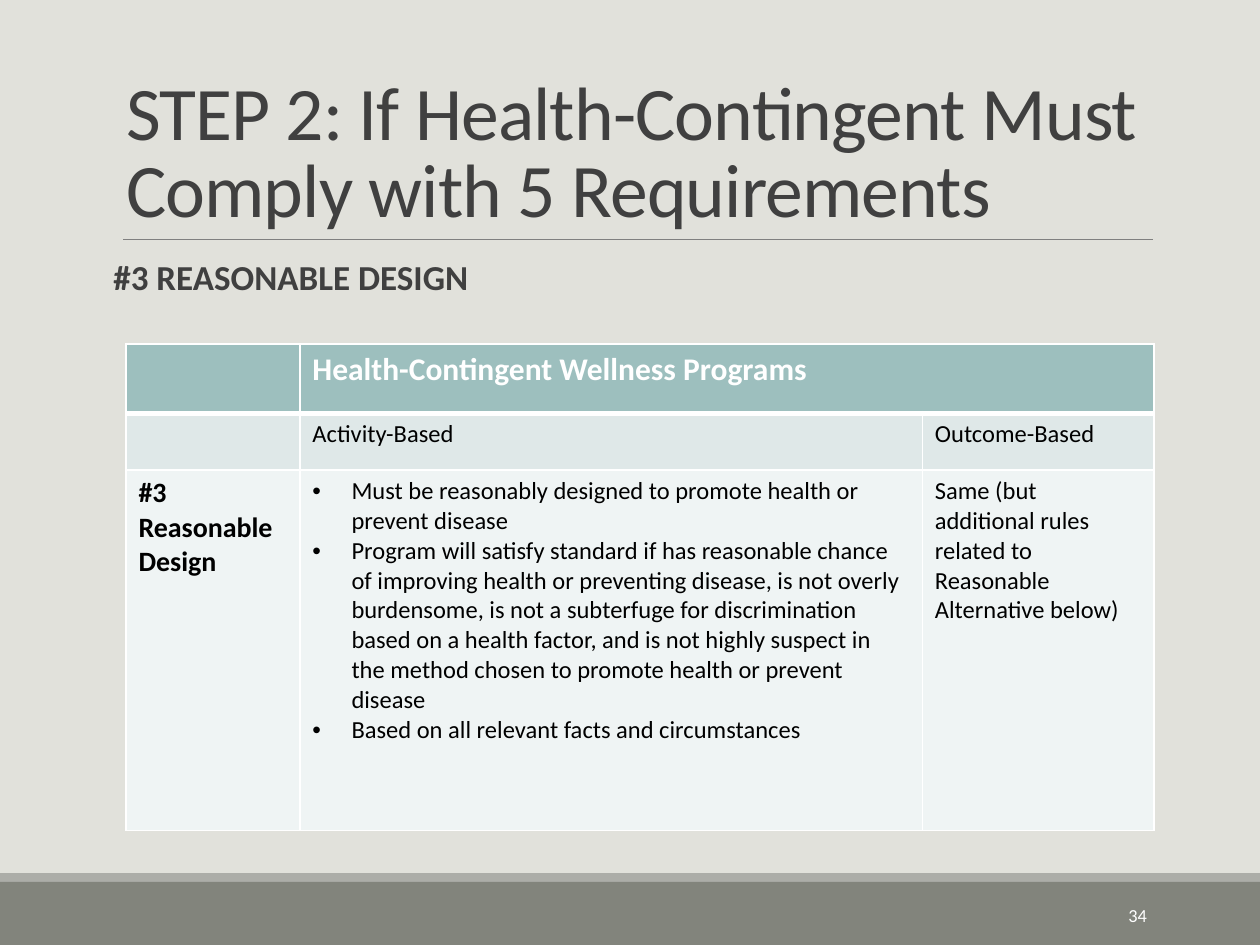
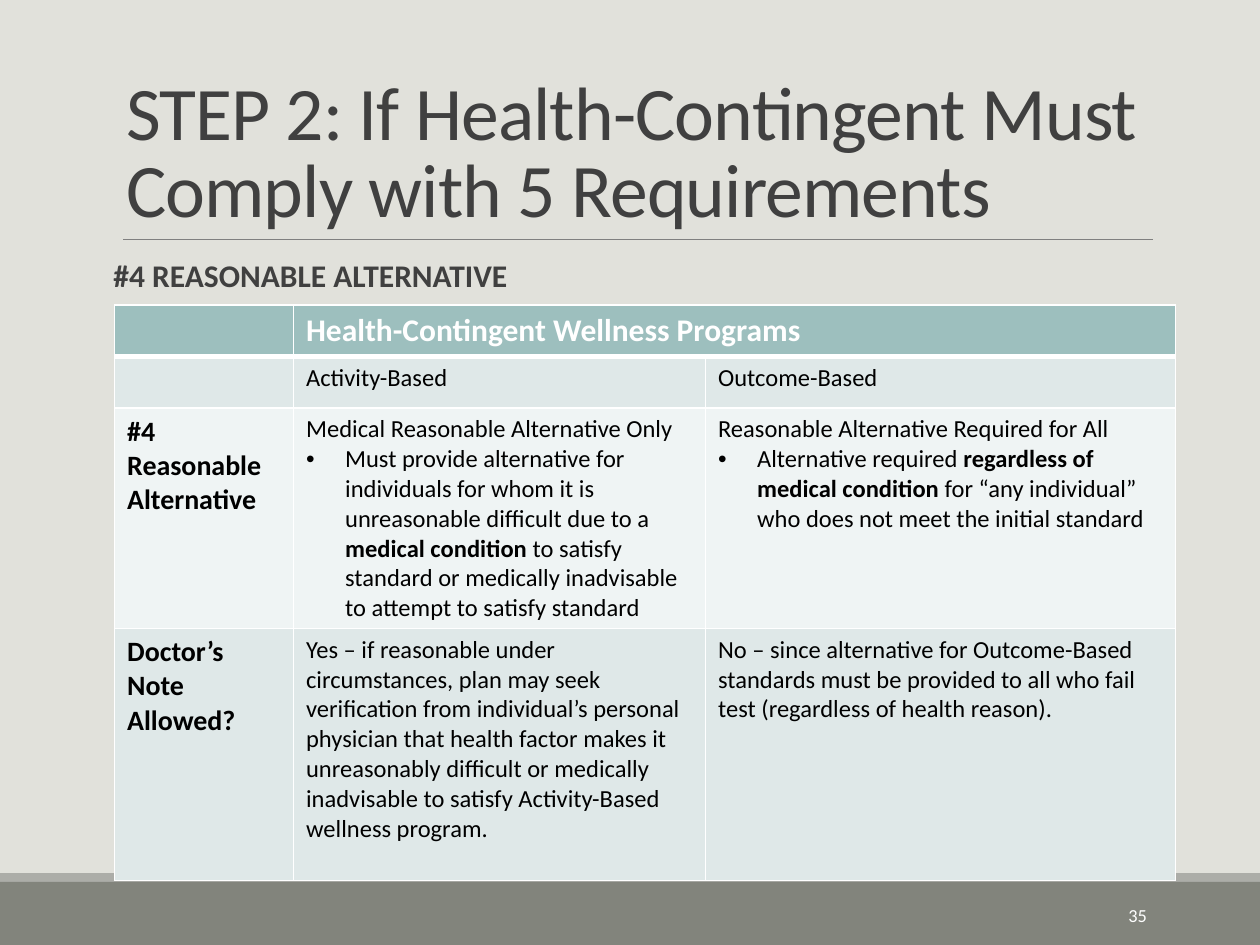
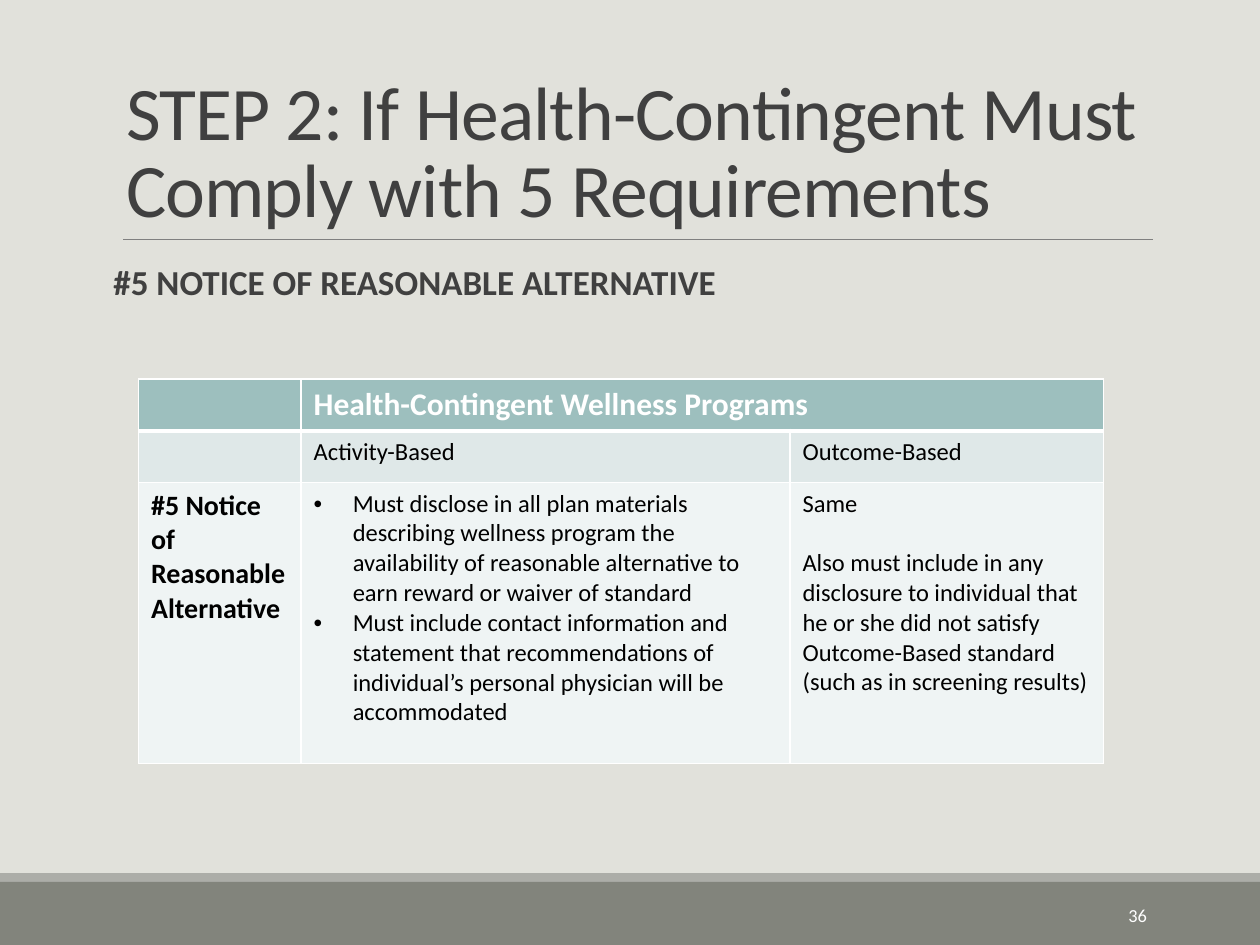
from dataclasses import dataclass

from lxml import etree
from pptx import Presentation
from pptx.dml.color import RGBColor
from pptx.enum.shapes import MSO_CONNECTOR, MSO_SHAPE
from pptx.enum.text import MSO_ANCHOR, PP_ALIGN
from pptx.oxml.ns import qn
from pptx.util import Inches, Pt

RECTANGLE = MSO_SHAPE.RECTANGLE
STRAIGHT = MSO_CONNECTOR.STRAIGHT
MIDDLE, BOTTOM = MSO_ANCHOR.MIDDLE, MSO_ANCHOR.BOTTOM
LEFT, RIGHT = PP_ALIGN.LEFT, PP_ALIGN.RIGHT

FONT = "Calibri"
BACKGROUND, STRIPE, FOOTER, RULE = "E1E1DB", "ACADA8", "82847C", "808080"
DARK, BLACK, WHITE = "404040", "000000", "FFFFFF"
HEADER_FILL, BAND_FILLS = "9DBFBE", ("DFE8E8", "EFF4F4")

TITLE = "STEP 2: If Health-Contingent Must Comply with 5 Requirements"
HEADER_ROW = ("", "Health-Contingent Wellness Programs", "")
SUBHEADER_ROW = ("", "Activity-Based", "Outcome-Based")
FIRST_NUMBER = 34
BLANK_LINE = 17  # points


@dataclass(frozen=True)
class Line:
    """One paragraph of a cell; **double stars** mark bold words."""
    text: str
    bullet: bool = False
    space_before: float = 0


@dataclass(frozen=True)
class Requirement:
    """One slide: a heading and a table comparing the two programs."""
    heading: str
    heading_size: float
    heading_top: float
    heading_height: float
    table_left: float
    table_top: float
    columns: tuple[float, ...]
    rows: tuple[float, ...]
    body: tuple[tuple[str, list[Line], list[Line]], ...]


REQUIREMENTS = [
    Requirement(
        "#3 REASONABLE DESIGN", 20, 2.02, 4.4,
        1, 2.73, (1.38, 4.94, 1.84), (0.55, 0.45, 2.86),
        ((
            "#3 Reasonable Design",
            [
                Line("Must be reasonably designed to promote health or prevent disease", True),
                Line("Program will satisfy standard if has reasonable chance of improving "
                     "health or preventing disease, is not overly burdensome, is not a "
                     "subterfuge for discrimination based on a health factor, and is not "
                     "highly suspect in the method chosen to promote health or prevent "
                     "disease", True),
                Line("Based on all relevant facts and circumstances", True),
            ],
            [Line("Same (but additional rules related to Reasonable Alternative below)")],
        ),),
    ),
    Requirement(
        "#4 REASONABLE ALTERNATIVE", 18, 2.02, 4.4,
        0.91, 2.42, (1.42, 3.27, 3.73), (0.41, 0.41, 1.75, 2),
        (
            (
                "#4 Reasonable Alternative",
                [
                    Line("Medical Reasonable Alternative Only"),
                    Line("Must provide alternative for individuals for whom it is "
                         "unreasonable difficult due to a **medical condition **to satisfy "
                         "standard or medically inadvisable to attempt to satisfy standard",
                         True),
                ],
                [
                    Line("Reasonable Alternative Required for All"),
                    Line("Alternative required **regardless of medical condition **for “any "
                         "individual” who does not meet the initial standard", True),
                ],
            ),
            (
                "Doctor’s Note Allowed?",
                [Line("Yes – if reasonable under circumstances, plan may seek verification "
                      "from individual’s personal physician that health factor makes it "
                      "unreasonably difficult or medically inadvisable to satisfy "
                      "Activity-Based wellness program.")],
                [Line("No – since alternative for Outcome-Based standards must be provided "
                      "to all who fail test (regardless of health reason).")],
            ),
        ),
    ),
    Requirement(
        "#5 NOTICE OF REASONABLE ALTERNATIVE", 20, 2.06, 4.97,
        1.1, 3.01, (1.29, 3.88, 2.49), (0.41, 0.41, 2.23),
        ((
            "#5 Notice of Reasonable Alternative",
            [
                Line("Must disclose in all plan materials describing wellness program the "
                     "availability of reasonable alternative to earn reward or waiver of "
                     "standard", True),
                Line("Must include contact information and statement that recommendations "
                     "of individual’s personal physician will be accommodated", True),
            ],
            [
                Line("Same"),
                Line("Also must include in any disclosure to individual that he or she did "
                     "not satisfy Outcome-Based standard (such as in screening results)",
                     space_before=BLANK_LINE),
            ],
        ),),
    ),
]


def color(value: str) -> RGBColor:
    return RGBColor.from_string(value)


def style(paragraph, size: float, ink: str, bold: bool | None = False, align=LEFT) -> None:
    paragraph.alignment = align
    font = paragraph.font
    font.name, font.size, font.bold = FONT, Pt(size), bold
    font.color.rgb = color(ink)


# Shared parts
def add_band(page, top: float, height: float, fill: str) -> None:
    band = page.shapes.add_shape(RECTANGLE, 0, Inches(top), Inches(10), Inches(height))
    band.shadow.inherit = False
    band.fill.solid()
    band.fill.fore_color.rgb = color(fill)
    band.line.fill.background()


def add_title_rule(page) -> None:
    rule = page.shapes.add_connector(
        STRAIGHT, Inches(0.98), Inches(1.9), Inches(9.15), Inches(1.9))
    rule.line.color.rgb = color(RULE)
    rule.line.width = Pt(0.5)
    etree.SubElement(rule._element.spPr, qn("a:effectLst"))


def add_title(page) -> None:
    title = page.shapes.title
    title.left, title.top = Inches(0.9), Inches(0.31)
    title.width, title.height = Inches(8.25), Inches(1.59)
    title.text_frame.word_wrap = True
    title.text_frame.vertical_anchor = BOTTOM
    para = title.text_frame.paragraphs[0]
    span = para.add_run()
    span.text = TITLE
    span._r.get_or_add_rPr().set("spc", "-50")
    para.line_spacing = 0.85
    style(para, 43.2, DARK)


def add_number(page, number: int) -> None:
    box = page.shapes.add_textbox(Inches(8.12), Inches(7.06), Inches(1.08), Inches(0.4))
    box.text_frame.word_wrap = True
    box.text_frame.vertical_anchor = MIDDLE
    para = box.text_frame.paragraphs[0]
    para.text = str(number)
    style(para, 10.5, WHITE, align=RIGHT)


def add_heading(page, item: Requirement) -> None:
    box = page.shapes.add_textbox(
        Inches(0.9), Inches(item.heading_top), Inches(8.25), Inches(item.heading_height))
    frame = box.text_frame
    frame.word_wrap = True
    frame.margin_left = frame.margin_right = 0
    para = frame.paragraphs[0]
    para.text = item.heading
    para.line_spacing = 0.9
    style(para, item.heading_size, DARK, True)


# Table
def set_borders(cell, bottom: float = 1) -> None:
    properties = cell._tc.get_or_add_tcPr()
    for side, width in (("L", 1), ("R", 1), ("T", 1), ("B", bottom)):
        border = etree.SubElement(properties, qn(f"a:ln{side}"), w=str(Pt(width)))
        fill = etree.SubElement(border, qn("a:solidFill"))
        etree.SubElement(fill, qn("a:srgbClr"), val=WHITE)


def fill_cell(cell, fill: str) -> None:
    cell.fill.solid()
    cell.fill.fore_color.rgb = color(fill)


def add_bullet(paragraph) -> None:
    properties = paragraph._p.get_or_add_pPr()
    properties.set("marL", str(Inches(0.31)))
    properties.set("indent", str(-Inches(0.31)))
    etree.SubElement(properties, qn("a:buFont"), typeface="Arial")
    etree.SubElement(properties, qn("a:buChar"), char="•")


def write_lines(cell, lines: list[Line]) -> None:
    frame = cell.text_frame
    for index, line in enumerate(lines):
        para = frame.add_paragraph() if index else frame.paragraphs[0]
        if line.space_before:
            para.space_before = Pt(line.space_before)
        if line.bullet:
            add_bullet(para)
        parts = line.text.split("**")
        for position, part in enumerate(parts):
            span = para.add_run()
            span.text = part
            if len(parts) > 1:
                span.font.bold = position % 2 == 1
        style(para, 14, BLACK, None if len(parts) > 1 else False)


def write_label(cell, text: str, size: float, ink: str, bold: bool) -> None:
    if text:
        para = cell.text_frame.paragraphs[0]
        para.text = text
        style(para, size, ink, bold)


def add_comparison(page, item: Requirement) -> None:
    table = page.shapes.add_table(
        len(item.rows), len(item.columns), Inches(item.table_left), Inches(item.table_top),
        Inches(sum(item.columns)), Inches(sum(item.rows))).table
    table.first_row = table.horz_banding = False
    for column, width in zip(table.columns, item.columns):
        column.width = Inches(width)
    for index, (row, height) in enumerate(zip(table.rows, item.rows)):
        row.height = Inches(height)
        for cell in row.cells:
            set_borders(cell, 1 if index else 3)
            fill_cell(cell, BAND_FILLS[(index - 1) % 2] if index else HEADER_FILL)

    table.cell(0, 1).merge(table.cell(0, 2))
    for column, (header, subheader) in enumerate(zip(HEADER_ROW, SUBHEADER_ROW)):
        write_label(table.cell(0, column), header, 18, WHITE, True)
        write_label(table.cell(1, column), subheader, 14, BLACK, False)
    for index, (label, activity, outcome) in enumerate(item.body, start=2):
        write_label(table.cell(index, 0), label, 16, BLACK, True)
        write_lines(table.cell(index, 1), activity)
        write_lines(table.cell(index, 2), outcome)


def add_page(deck, item: Requirement, number: int) -> None:
    page = deck.slides.add_slide(deck.slide_layouts.get_by_name("Title Only"))
    add_band(page, 6.93, 0.07, STRIPE)
    add_title_rule(page)
    add_band(page, 7, 0.5, FOOTER)
    add_title(page)
    add_heading(page, item)
    add_number(page, number)
    add_comparison(page, item)


def main() -> None:
    deck = Presentation()
    deck.slide_width, deck.slide_height = Inches(10), Inches(7.5)
    background = deck.slide_master.background.fill
    background.solid()
    background.fore_color.rgb = color(BACKGROUND)
    for number, item in enumerate(REQUIREMENTS, start=FIRST_NUMBER):
        add_page(deck, item, number)
    deck.save("out.pptx")


if __name__ == "__main__":
    main()
